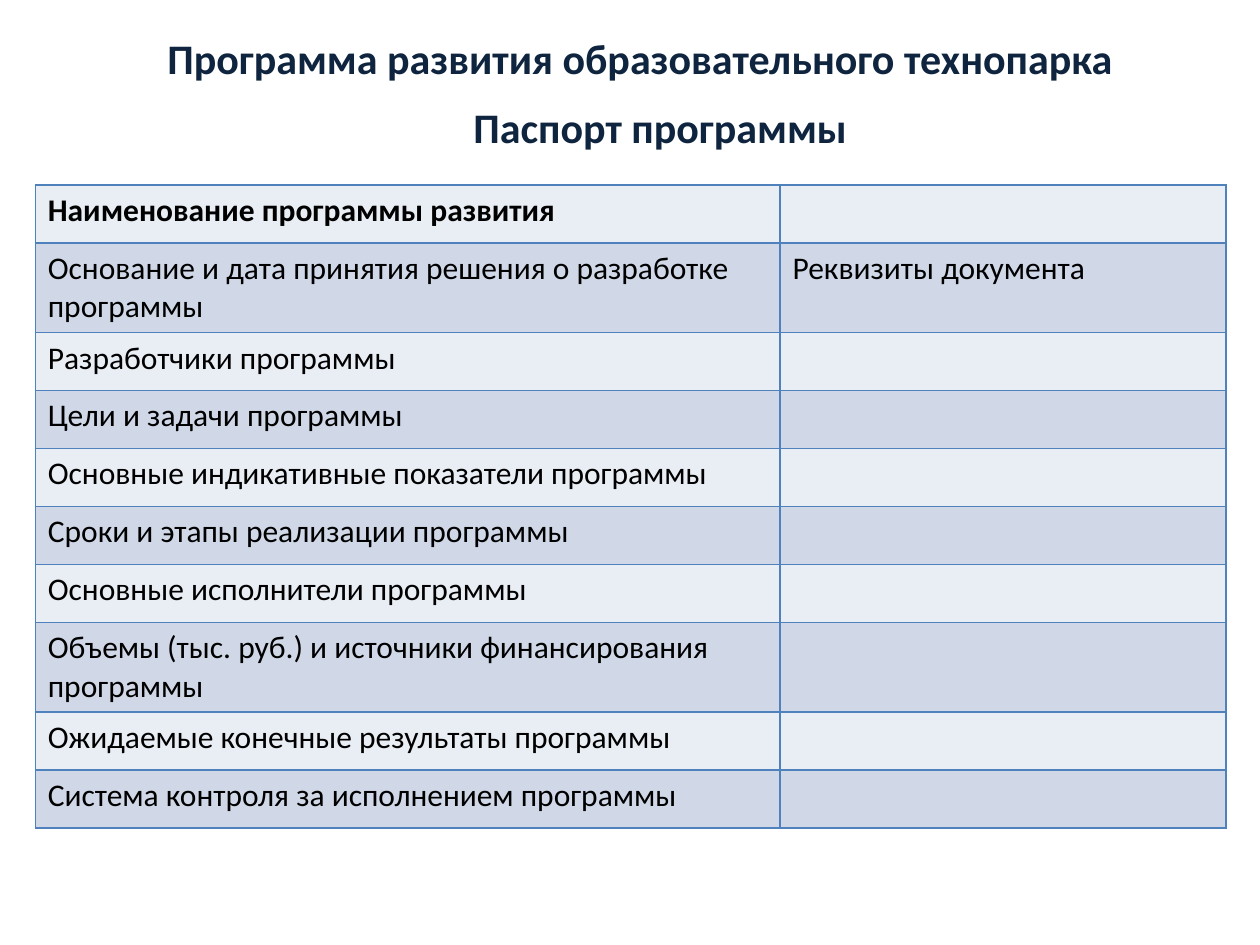
from typing import NamedTuple

from lxml import etree
from pptx import Presentation, util as u
from pptx.dml.color import RGBColor
from pptx.enum import text as t
from pptx.oxml.ns import qn

WIDE, HIGH = 10, 7.5
FONT = "Calibri"
HUES = {"title": "0F243E", "text": "000000", "line": "4F81BD",
        "light": "E9EDF4", "dark": "D0D8E8"}
COLS = (5.91, 3.54)
ROW = 0.46


class Title(NamedTuple):
    text: str
    left: float  # share of slide width
    top: float  # share of slide height


class Row(NamedTuple):
    name: str
    value: str = ""
    bold: bool = False


TITLES = [
    Title("Программа развития образовательного технопарка", 0.122, 0.028),
    Title("Паспорт программы", 0.138, 0.101),
]
ROWS = [
    Row("Наименование программы развития", bold=True),
    Row("Основание и дата принятия решения о разработке программы",
        "Реквизиты документа"),
    Row("Разработчики программы"),
    Row("Цели и задачи программы"),
    Row("Основные индикативные показатели программы"),
    Row("Сроки и этапы реализации программы"),
    Row("Основные исполнители программы"),
    Row("Объемы (тыс. руб.) и источники финансирования программы"),
    Row("Ожидаемые конечные результаты программы"),
    Row("Система контроля за исполнением программы"),
]


def add_run(para, words: str, size: int, hue: str, bold: bool) -> None:
    run = para.add_run()
    run.text = words
    font = run.font
    font.name, font.size, font.bold = FONT, u.Pt(size), bold
    font.color.rgb = RGBColor.from_string(HUES[hue])


def add_title(slide, title: Title) -> None:
    box = slide.shapes.add_textbox(
        u.Inches(title.left * WIDE), u.Inches(title.top * HIGH),
        u.Inches(7.72), u.Inches(0.5))
    frame = box.text_frame
    frame.word_wrap = True
    frame.auto_size = t.MSO_AUTO_SIZE.SHAPE_TO_FIT_TEXT
    para = frame.paragraphs[0]
    para.alignment = t.PP_ALIGN.CENTER
    add_run(para, title.text, 24, "title", True)


def add_edges(cell) -> None:
    """Draw a thin line on all four sides of a cell."""
    props = cell._tc.get_or_add_tcPr()
    for side in ("lnL", "lnR", "lnT", "lnB"):
        edge = etree.SubElement(props, qn(f"a:{side}"), w=str(u.Pt(1)))
        fill = etree.SubElement(edge, qn("a:solidFill"))
        etree.SubElement(fill, qn("a:srgbClr"), val=HUES["line"])


def fill_cell(cell, words: str, hue: str, bold: bool) -> None:
    add_edges(cell)
    cell.fill.solid()
    cell.fill.fore_color.rgb = RGBColor.from_string(HUES[hue])
    if words:
        add_run(cell.text_frame.paragraphs[0], words, 18, "text", bold)


def add_grid(slide, rows: list[Row]) -> None:
    grid = slide.shapes.add_table(
        len(rows), len(COLS), u.Inches(0.28), u.Inches(1.47),
        u.Inches(sum(COLS)), u.Inches(ROW * len(rows))).table
    for col, width in zip(grid.columns, COLS):
        col.width = u.Inches(width)
    for i, row in enumerate(rows):
        grid.rows[i].height = u.Inches(ROW)
        hue = "dark" if i % 2 else "light"
        for j, words in enumerate((row.name, row.value)):
            fill_cell(grid.cell(i, j), words, hue, row.bold)


def main() -> None:
    deck = Presentation()
    deck.slide_width, deck.slide_height = u.Inches(WIDE), u.Inches(HIGH)
    slide = deck.slides.add_slide(deck.slide_layouts[6])
    add_grid(slide, ROWS)
    for title in TITLES:
        add_title(slide, title)
    deck.save("out.pptx")


if __name__ == "__main__":
    main()
